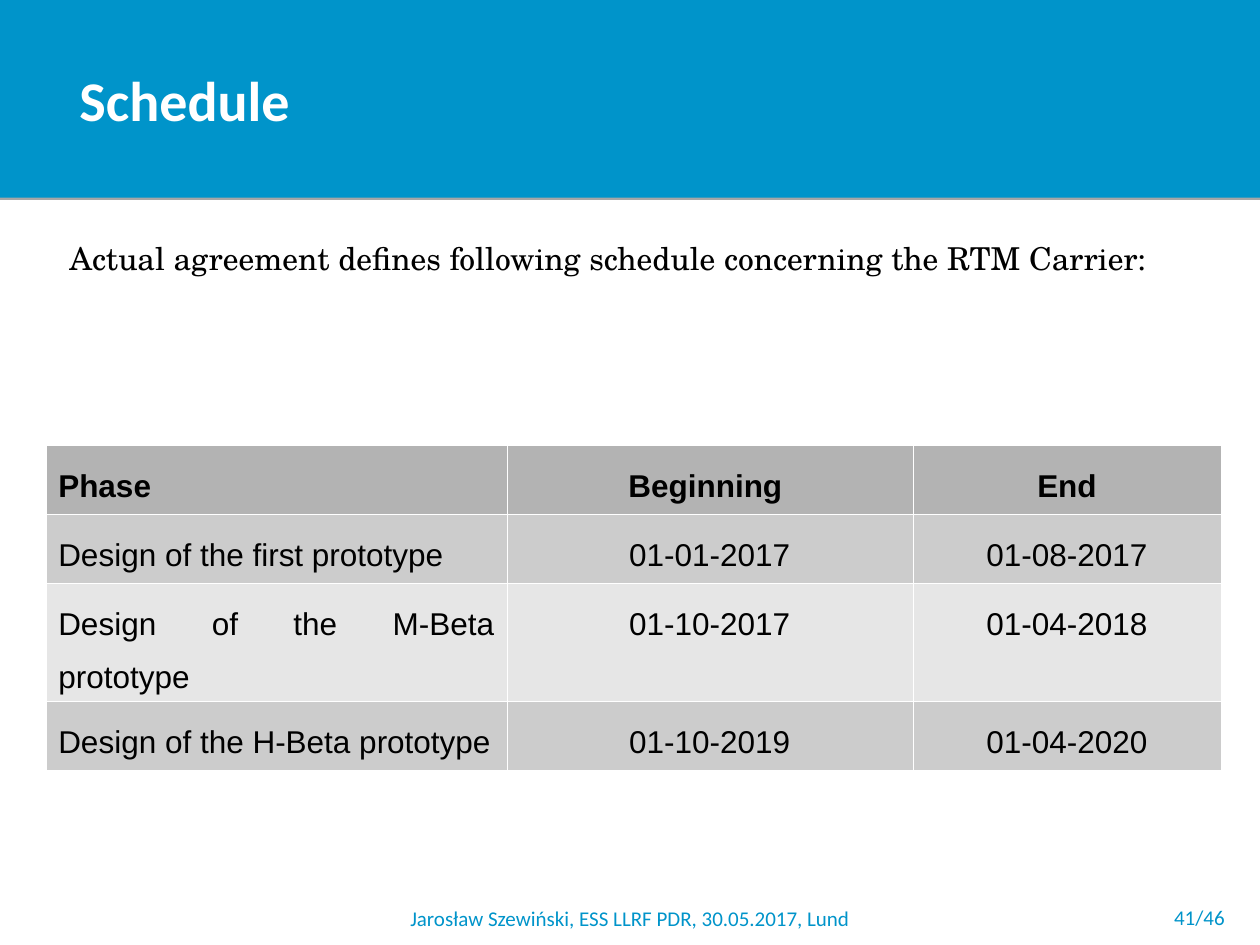
"""Build the project schedule slide with a banner, a phase table and a footer."""
from dataclasses import dataclass

from lxml import etree
from pptx import Presentation
from pptx import util as u
from pptx.dml.color import RGBColor
from pptx.enum import shapes, text
from pptx.oxml import parse_xml
from pptx.oxml.ns import nsdecls, qn

Pt = u.Pt
COLORS = {
    "blue": "0094CA", "white": "FFFFFF", "black": "000000",
    "header": "B3B3B3", "dark": "CCCCCC", "light": "E6E6E6",
}
LEFT, CENTER, RIGHT, JUSTIFY = (
    text.PP_ALIGN.LEFT, text.PP_ALIGN.CENTER, text.PP_ALIGN.RIGHT, text.PP_ALIGN.JUSTIFY)
TOP, MIDDLE = text.MSO_ANCHOR.TOP, text.MSO_ANCHOR.MIDDLE
INSET = (7.2, 3.6)
ROWS = [
    ("Phase", "Beginning ", "End"),
    ("Design of the first prototype", "01-01-2017", "01-08-2017"),
    ("Design of the M-Beta prototype", "01-10-2017", "01-04-2018"),
    ("Design of the H-Beta prototype", "01-10-2019", "01-04-2020"),
]
ROW_FILLS = ["header", "dark", "light", "dark"]
COL_WIDTHS = [263.5, 232, 176.3]
ROW_HEIGHT = 39.4


@dataclass
class Style:
    font: str
    size: float
    color: str
    align: text.PP_ALIGN
    bold: bool = False
    spacing: float = 1.0


@dataclass
class Block:
    words: str
    box: tuple[float, float, float, float]
    style: Style
    anchor: text.MSO_ANCHOR = MIDDLE
    inset: tuple[float, float] = (0, 0)
    indent: float = 0


TITLE = Block("Schedule", (45.4, 0, 477.4, 113.8),
              Style("Calibri", 32, "white", LEFT, bold=True))
BODY = Block("Actual agreement defines following schedule concerning the RTM Carrier:",
             (22.3, 126, 674.6, 378.7),
             Style("TeX Gyre Schola", 18, "black", JUSTIFY, spacing=1.5),
             anchor=TOP, indent=17.3)
FOOTERS = [
    Block("41/46", (640.8, 514.8, 66.2, 18.7),
          Style("Calibri", 12, "blue", RIGHT), inset=INSET),
    Block("Jarosław Szewiński, ESS LLRF PDR, 30.05.2017, Lund", (5.8, 515.5, 708.5, 18.7),
          Style("Calibri", 12, "blue", CENTER), inset=INSET),
]


def rgb(name: str) -> RGBColor:
    return RGBColor.from_string(COLORS[name])


def set_all(target, values: dict) -> None:
    for name, value in values.items():
        setattr(target, name, value)


def format_paragraph(p, words: str, style: Style) -> None:
    p.text = words
    set_all(p, {"alignment": style.align, "line_spacing": style.spacing, "space_before": Pt(0)})
    font = p.runs[0].font
    set_all(font, {"name": style.font, "size": Pt(style.size), "bold": style.bold})
    font.color.rgb = rgb(style.color)


def fill_block(sp, block: Block) -> None:
    set_all(sp, dict(zip(("left", "top", "width", "height"), map(Pt, block.box))))
    tf = sp.text_frame
    x, y = map(Pt, block.inset)
    set_all(tf, {
        "word_wrap": True, "auto_size": text.MSO_AUTO_SIZE.NONE,
        "vertical_anchor": block.anchor, "margin_left": x, "margin_right": x,
        "margin_top": y, "margin_bottom": y,
    })
    p = tf.paragraphs[0]
    pPr = p._p.get_or_add_pPr()
    etree.SubElement(pPr, qn("a:buNone"))
    set_all_xml = {"marL": str(int(Pt(block.indent))), "indent": "0"}
    for name, value in set_all_xml.items():
        pPr.set(name, value)
    format_paragraph(p, block.words, block.style)


def add_banner(s) -> None:
    banner = s.shapes.add_shape(shapes.MSO_SHAPE.RECTANGLE, 0, 0, Pt(720), Pt(113))
    banner.fill.solid()
    banner.fill.fore_color.rgb = rgb("blue")
    banner.line.fill.background()
    banner._element.spPr.append(parse_xml(
        f'<a:effectLst {nsdecls("a")}><a:outerShdw blurRad="0" dist="{int(Pt(1.8))}" '
        f'dir="5400000" rotWithShape="0"><a:srgbClr val="{COLORS["black"]}">'
        '<a:alpha val="35000"/></a:srgbClr></a:outerShdw></a:effectLst>'))
    rule = s.shapes.add_connector(
        shapes.MSO_CONNECTOR.STRAIGHT, 0, Pt(114.5), Pt(720), Pt(114.5))
    rule.line.color.rgb = rgb("white")
    rule.line.width = Pt(0.5)
    etree.SubElement(rule._element.spPr, qn("a:effectLst"))
    for index, sp in enumerate((banner, rule), start=2):
        s.shapes._spTree.insert(index, sp._element)


def add_borders(cell) -> None:
    tcPr = cell._tc.get_or_add_tcPr()
    for index, side in enumerate(("lnL", "lnR", "lnT", "lnB")):
        tcPr.insert(index, parse_xml(
            f'<a:{side} {nsdecls("a")} w="{int(Pt(0.06))}"><a:solidFill>'
            f'<a:srgbClr val="{COLORS["white"]}"/></a:solidFill></a:{side}>'))


def add_schedule(s) -> None:
    table = s.shapes.add_table(
        len(ROWS), len(COL_WIDTHS), Pt(26.1), Pt(254.4),
        Pt(sum(COL_WIDTHS)), Pt(ROW_HEIGHT * len(ROWS))).table
    for column, width in zip(table.columns, COL_WIDTHS):
        column.width = Pt(width)
    for i, (row, fill) in enumerate(zip(ROWS, ROW_FILLS)):
        table.rows[i].height = Pt(ROW_HEIGHT)
        for j, words in enumerate(row):
            cell = table.cell(i, j)
            cell.fill.solid()
            cell.fill.fore_color.rgb = rgb(fill)
            add_borders(cell)
            style = Style("Arial", 18, "black", CENTER if j else JUSTIFY, i == 0, 1.5)
            format_paragraph(cell.text_frame.paragraphs[0], words, style)


def main() -> None:
    prs = Presentation()
    set_all(prs, {"slide_width": Pt(720), "slide_height": Pt(540)})
    s = prs.slides.add_slide(prs.slide_layouts[1])
    add_banner(s)
    fill_block(s.shapes.title, TITLE)
    fill_block(s.placeholders[1], BODY)
    for footer in FOOTERS:
        fill_block(s.shapes.add_textbox(0, 0, 0, 0), footer)
    add_schedule(s)
    prs.save("out.pptx")


if __name__ == "__main__":
    main()
